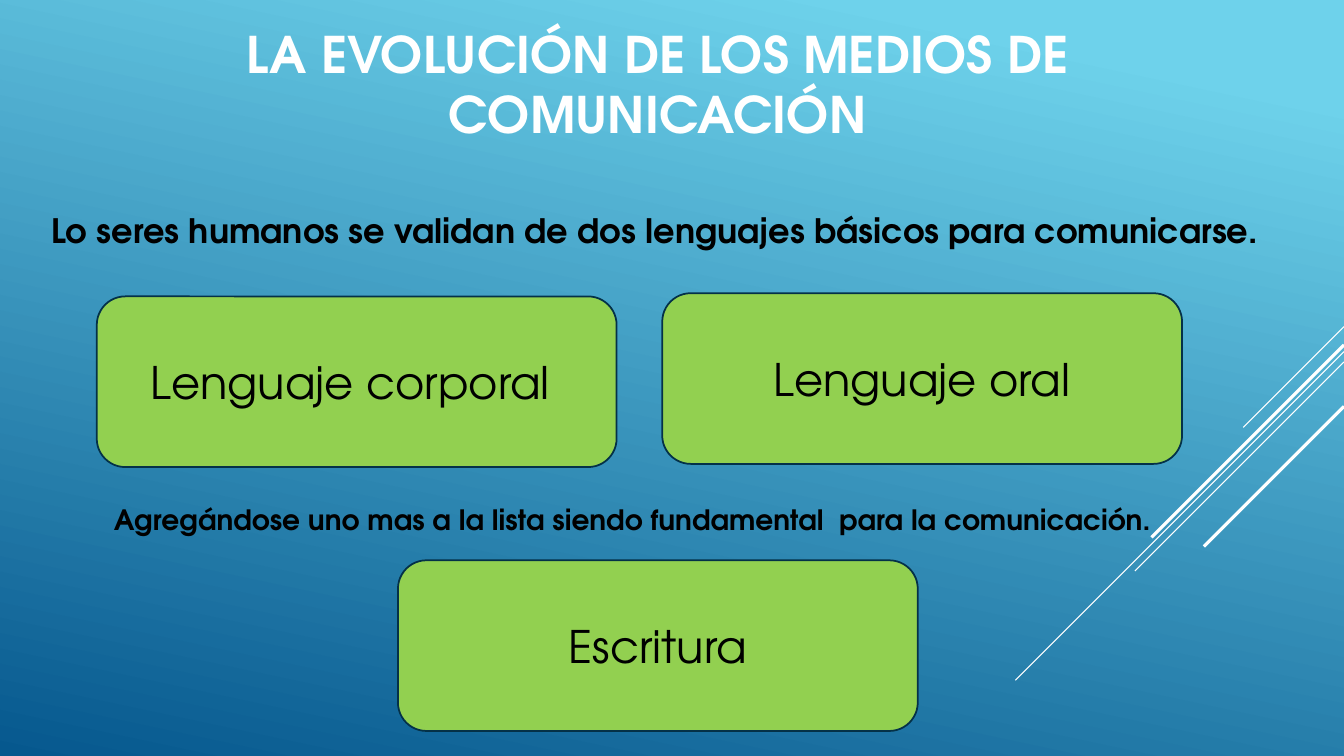
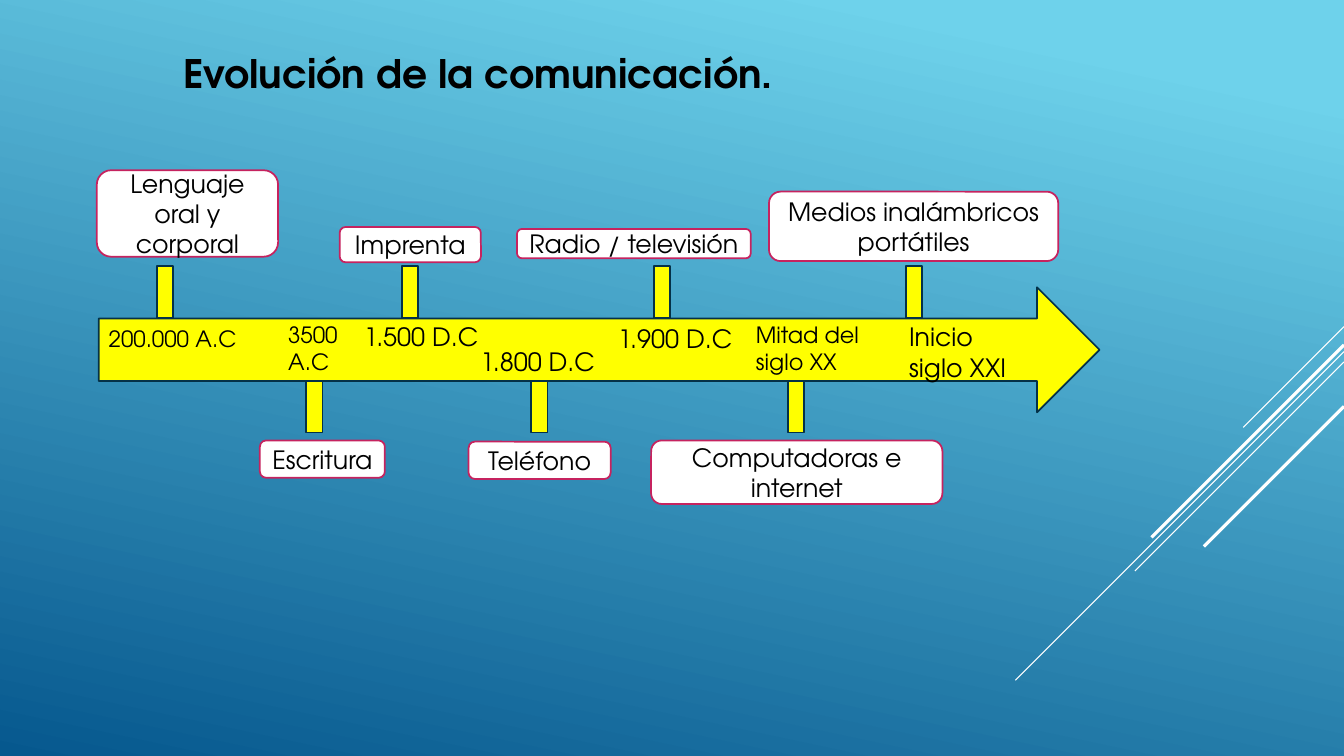
import dataclasses
import typing

import lxml.etree
import pptx
import pptx.dml.color
import pptx.enum.shapes
import pptx.enum.text
import pptx.oxml.ns
import pptx.presentation
import pptx.shapes.autoshape
import pptx.slide
import pptx.text.text
import pptx.util

Cm = pptx.util.Cm
Kind = pptx.enum.shapes.MSO_SHAPE
Align = pptx.enum.text.PP_ALIGN
Anchor = pptx.enum.text.MSO_ANCHOR

FONT = "TeX Gyre Adventor"
WHITE, BLACK, NAVY = "FFFFFF", "000000", "043148"
GREEN, YELLOW, PINK = "92D050", "FFFF00", "C6235F"
SKY, DEEP = "6ED2EB", "06588E"
WIDE, HIGH = 33.87, 19.05


@dataclasses.dataclass(frozen=True)
class Box:
    left: float
    top: float
    width: float
    height: float

    def spots(self) -> tuple[int, int, int, int]:
        return Cm(self.left), Cm(self.top), Cm(self.width), Cm(self.height)


@dataclasses.dataclass(frozen=True)
class Style:
    size: int
    bold: bool = False
    color: str = BLACK
    align: typing.Any = Align.LEFT
    anchor: typing.Any = Anchor.TOP


@dataclasses.dataclass(frozen=True)
class Ray:
    top: float
    reach: float
    weight: float


@dataclasses.dataclass(frozen=True)
class Event:
    name: str
    label: Box
    above: bool
    peg: float
    date: str
    place: Box
    size: int


# Diagonal rays that start at the right edge of every slide
RAYS = [
    Ray(8.23, 2.54, 0.75),
    Ray(8.86, 8.28, 0.75),
    Ray(9.12, 5.27, 0.75),
    Ray(8.69, 4.85, 2.25),
    Ray(10.24, 3.53, 2.25),
]

CARDS = [
    ("Lenguaje corporal ", 2.44, 7.47),
    ("Lenguaje oral", 16.69, 7.39),
    ("Escritura", 10.03, 14.12),
]

NOTES = [
    ("Lo seres humanos se validan de dos lenguajes básicos para comunicarse.",
     Box(1.04, 5.16, 32.8, 2.06), 24),
    ("Agregándose uno mas a la lista siendo fundamental  para la comunicación.",
     Box(2.62, 12.55, 29.67, 1.12), 20),
]

EVENTS = [
    Event("Lenguaje oral y corporal", Box(2.44, 4.29, 4.57, 2.18), True, 3.96,
          "200.000 A.C", Box(2.49, 8.08, 3.76, 0.94), 16),
    Event("Escritura", Box(6.55, 11.1, 3.15, 0.94), False, 7.72,
          "3500 A.C", Box(7.01, 7.98, 2.57, 1.63), 16),
    Event("Imprenta", Box(8.56, 5.72, 3.56, 0.89), True, 10.13,
          "1.500 D.C", Box(8.92, 7.98, 3.61, 1.02), 18),
    Event("Teléfono", Box(11.81, 11.13, 3.58, 0.94), False, 13.39,
          "1.800 D.C", Box(11.86, 8.61, 3.91, 1.02), 18),
    Event("Radio / televisión", Box(13.03, 5.77, 5.89, 0.74), True, 16.48,
          "1.900 D.C", Box(15.32, 8.03, 3.61, 1.02), 18),
    Event("Computadoras e internet", Box(16.41, 11.1, 7.34, 1.6), False, 19.86,
          "Mitad del siglo XX", Box(18.8, 7.98, 3.86, 1.63), 16),
    Event("Medios inalámbricos portátiles", Box(19.38, 4.83, 7.29, 1.75), True,
          22.83, "Inicio siglo XXI", Box(22.66, 7.98, 3.48, 1.8), 18),
]


def paint(code: str) -> pptx.dml.color.RGBColor:
    return pptx.dml.color.RGBColor.from_string(code)


def write(frame: pptx.text.text.TextFrame, text: str, style: Style) -> None:
    frame.word_wrap = True
    frame.auto_size = pptx.enum.text.MSO_AUTO_SIZE.NONE
    frame.vertical_anchor = style.anchor
    para = frame.paragraphs[0]
    para.alignment = style.align
    run = para.add_run()
    run.text = text
    run.font.name = FONT
    run.font.size = pptx.util.Pt(style.size)
    run.font.bold = style.bold
    run.font.color.rgb = paint(style.color)


def add_text(slide: pptx.slide.Slide, box: Box, text: str, style: Style) -> None:
    write(slide.shapes.add_textbox(*box.spots()).text_frame, text, style)


def add_form(slide: pptx.slide.Slide, kind: Kind, box: Box, fill: str,
             edge: str) -> pptx.shapes.autoshape.Shape:
    form = slide.shapes.add_shape(kind, *box.spots())
    form.shadow.inherit = False
    form.fill.solid()
    form.fill.fore_color.rgb = paint(fill)
    form.line.color.rgb = paint(edge)
    form.line.width = pptx.util.Pt(1.25)
    return form


def add_card(slide: pptx.slide.Slide, box: Box, text: str, size: int,
             fill: str, edge: str) -> None:
    card = add_form(slide, Kind.ROUNDED_RECTANGLE, box, fill, edge)
    write(card.text_frame, text,
          Style(size, align=Align.CENTER, anchor=Anchor.MIDDLE))


def add_ray(slide: pptx.slide.Slide, ray: Ray) -> None:
    line = slide.shapes.add_connector(
        pptx.enum.shapes.MSO_CONNECTOR.STRAIGHT, Cm(WIDE), Cm(ray.top),
        Cm(WIDE - ray.reach), Cm(ray.top + ray.reach))
    line.line.color.rgb = paint(WHITE)
    line.line.width = pptx.util.Pt(ray.weight)
    lxml.etree.SubElement(line._element.spPr, pptx.oxml.ns.qn("a:effectLst"))


def set_back(deck: pptx.presentation.Presentation) -> None:
    fill = deck.slide_master.background.fill
    fill.gradient()
    fill.gradient_angle = 258
    for stop, code, place in zip(fill.gradient_stops, (SKY, DEEP), (0.1, 1)):
        stop.color.rgb = paint(code)
        stop.position = place


def new_slide(deck: pptx.presentation.Presentation, title: str, box: Box,
              style: Style) -> pptx.slide.Slide:
    slide = deck.slides.add_slide(deck.slide_layouts[5])
    head = slide.shapes.title
    head.left, head.top, head.width, head.height = box.spots()
    write(head.text_frame, title, style)
    for ray in RAYS:
        add_ray(slide, ray)
    return slide


def build_forms(deck: pptx.presentation.Presentation) -> None:
    slide = new_slide(
        deck, "LA EVOLUCIÓN DE LOS MEDIOS DE COMUNICACIÓN",
        Box(3.35, 0.28, 26.44, 3.63),
        Style(36, True, WHITE, Align.CENTER, Anchor.MIDDLE))
    for text, left, top in CARDS:
        add_card(slide, Box(left, top, 13.1, 4.3), text, 32, GREEN, NAVY)
    for text, box, size in NOTES:
        add_text(slide, box, text, Style(size, True))


def build_times(deck: pptx.presentation.Presentation) -> None:
    slide = new_slide(deck, "Evolución de la comunicación.",
                      Box(4.37, 1.12, 18.47, 1.45), Style(28, True))
    add_form(slide, Kind.RIGHT_ARROW, Box(2.49, 7.24, 25.22, 3.15), YELLOW, NAVY)
    # Pegs and labels, above or below the arrow
    for event in EVENTS:
        top = 6.71 if event.above else 9.6
        add_form(slide, Kind.RECTANGLE, Box(event.peg, top, 0.41, 1.3),
                 YELLOW, NAVY)
        add_card(slide, event.label, event.name, 18, WHITE, PINK)
    # Dates on the arrow
    for event in EVENTS:
        add_text(slide, event.place, event.date, Style(event.size))


def main() -> None:
    deck = pptx.Presentation()
    deck.slide_width, deck.slide_height = Cm(WIDE), Cm(HIGH)
    set_back(deck)
    build_forms(deck)
    build_times(deck)
    deck.save("out.pptx")


if __name__ == "__main__":
    main()
